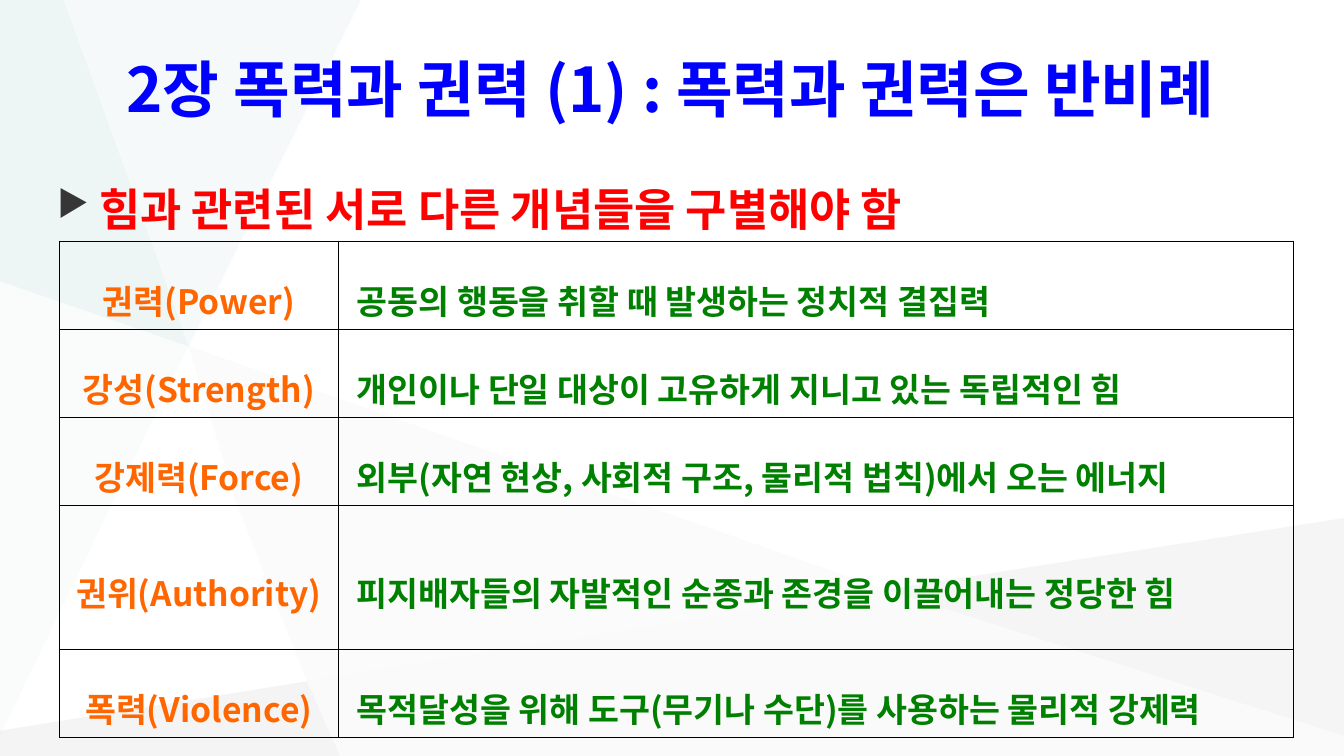
from dataclasses import dataclass
from typing import Any

from lxml.etree import SubElement
from pptx import Presentation
from pptx.dml.color import RGBColor
from pptx.enum.text import MSO_ANCHOR, MSO_AUTO_SIZE, PP_ALIGN
from pptx.oxml.ns import qn
from pptx.util import Emu, Inches, Pt

CENTER, JUSTIFY = PP_ALIGN.CENTER, PP_ALIGN.JUSTIFY
MIDDLE, TOP = MSO_ANCHOR.MIDDLE, MSO_ANCHOR.TOP
NO_FIT = MSO_AUTO_SIZE.NONE

BLUE = RGBColor(0x00, 0x00, 0xFF)
RED = RGBColor(0xFF, 0x00, 0x00)
ORANGE = RGBColor(0xFF, 0x66, 0x00)
GREEN = RGBColor(0x00, 0x80, 0x00)
BLACK = RGBColor(0x00, 0x00, 0x00)
DARK = RGBColor(0x36, 0x36, 0x36)
PEARL = RGBColor(0xF3, 0xF2, 0xF2)
STEEL = RGBColor(0xB6, 0xB8, 0xBA)
SILVER = RGBColor(0xC6, 0xC8, 0xCA)
MIST = RGBColor(0xE0, 0xED, 0xED)
TEAL = RGBColor(0xC1, 0xDB, 0xDB)

FONT = "Noto Sans CJK KR"
WIDTH, HEIGHT = Inches(13.33), Inches(7.5)
Point = tuple[float, float]

HUB: Point = (14.03, 45.8)
FOLD: Point = (22.83, 90.13)
TIP: Point = (65.94, 78)
FOOT: Point = (25.28, 100)
LEFT: Point = (0, 37.2)
EDGE: Point = (100, 97.3)
PEAK: Point = (4.73, 0)


@dataclass
class Facet:
    """A pale polygon, with corners in percent of the slide."""

    color: RGBColor
    alpha: int
    points: list[Point]


@dataclass
class Term:
    """A table row: concept, meaning and height in percent."""

    name: str
    sense: str
    height: float = 10.93


FACETS = [
    Facet(PEARL, 26, [HUB, (17.6, 66.5), FOLD, TIP]),
    Facet(STEEL, 15, [FOLD, (0, 96.67), (0, 100), FOOT]),
    Facet(MIST, 31, [(26.86, 0), PEAK, HUB]),
    Facet(SILVER, 17, [(100, 68.53), TIP, EDGE]),
    Facet(STEEL, 6, [TIP, FOLD, FOOT, (100, 100), EDGE]),
    Facet(TEAL, 27, [PEAK, (0, 0), LEFT, HUB]),
    Facet(TEAL, 8, [LEFT, (0, 97.3), HUB]),
]
TERMS = [
    Term("권력(Power)", "공동의 행동을 취할 때 발생하는 정치적 결집력"),
    Term("강성(Strength)", "개인이나 단일 대상이 고유하게 지니고 있는 독립적인 힘"),
    Term("강제력(Force)", "외부(자연 현상, 사회적 구조, 물리적 법칙)에서 오는 에너지"),
    Term("권위(Authority)", "피지배자들의 자발적인 순종과 존경을 이끌어내는 정당한 힘", 19.07),
    Term("폭력(Violence)", "목적달성을 위해 도구(무기나 수단)를 사용하는 물리적 강제력"),
]


def across(share: float) -> Emu:
    """Turn percent of the slide width into a length."""
    return Emu(round(WIDTH * share / 100))


def down(share: float) -> Emu:
    """Turn percent of the slide height into a length."""
    return Emu(round(HEIGHT * share / 100))


def apply(target: Any, values: dict[str, Any]) -> None:
    """Set each value as an attribute of the target."""
    for key, value in values.items():
        setattr(target, key, value)


def place(shape: Any, left: float, top: float, width: float, height: float) -> None:
    """Move and size a shape by shares of the slide."""
    apply(shape, {"left": across(left), "top": down(top),
                  "width": across(width), "height": down(height)})


def write(frame: Any, text: str, size: int, color: RGBColor, align: PP_ALIGN) -> None:
    """Fill a text frame with one bold line."""
    line = frame.paragraphs[0]
    apply(line, {"alignment": align, "line_spacing": 1.6})
    run = line.add_run()
    run.text = text
    apply(run.font, {"name": FONT, "size": Pt(size), "bold": True})
    run.font.color.rgb = color
    SubElement(run.font._element, qn("a:ea"), typeface=FONT)


def draw_facet(shapes: Any, facet: Facet) -> None:
    """Draw one see-through polygon."""
    start, *rest = [(across(x), down(y)) for x, y in facet.points]
    pen = shapes.build_freeform(*start)
    pen.add_line_segments(rest)
    shape = pen.convert_to_shape()
    shape.shadow.inherit = False
    shape.fill.solid()
    shape.fill.fore_color.rgb = facet.color
    shape.line.fill.background()
    color = shape.element.spPr.find(f".//{qn('a:srgbClr')}")
    SubElement(color, qn("a:alpha"), val=str(facet.alpha * 1000))


def draw_title(shapes: Any) -> None:
    """Place the title above the facets."""
    title = shapes.title
    shapes.element.append(title.element)
    place(title, 3.53, 1.87, 92.72, 13.73)
    apply(title.text_frame, {"vertical_anchor": MIDDLE, "auto_size": NO_FIT, "word_wrap": True})
    write(title.text_frame, "2장 폭력과 권력 (1) : 폭력과 권력은 반비례", 44, BLUE, CENTER)


def draw_lead(shapes: Any) -> None:
    """Draw the bulleted lead line."""
    box = shapes.add_textbox(0, 0, 0, 0)
    place(box, 3.53, 19.07, 92.72, 12)
    frame = box.text_frame
    apply(frame, {"vertical_anchor": TOP, "auto_size": NO_FIT, "word_wrap": True})
    form = frame.paragraphs[0]._p.get_or_add_pPr()
    indent = across(3.1)
    form.set("marL", str(indent))
    form.set("indent", str(-indent))
    tint = SubElement(form, qn("a:buClr"))
    SubElement(tint, qn("a:srgbClr"), val=str(DARK))
    SubElement(form, qn("a:buSzPct"), val="80000")
    SubElement(form, qn("a:buChar"), char="▶")
    write(frame, "힘과 관련된 서로 다른 개념들을 구별해야 함", 32, RED, JUSTIFY)


def frame_cell(cell: Any) -> None:
    """Give a cell thin borders and no fill."""
    form = cell._tc.get_or_add_tcPr()
    for side in ("lnL", "lnR", "lnT", "lnB"):
        line = SubElement(form, qn(f"a:{side}"), w=str(Pt(0.33)))
        fill = SubElement(line, qn("a:solidFill"))
        SubElement(fill, qn("a:srgbClr"), val=str(BLACK))
    cell.fill.background()


def draw_table(shapes: Any) -> None:
    """Draw the table of concepts."""
    height = sum(term.height for term in TERMS)
    table = shapes.add_table(len(TERMS), 2, across(4.43), down(31.87),
                             across(91.82), down(height)).table
    apply(table, {"first_row": False, "horz_banding": False})
    for column, share in zip(table.columns, (20.71, 71.11)):
        column.width = across(share)
    for row, term in zip(table.rows, TERMS):
        row.height = down(term.height)
        name, sense = row.cells
        sides = ((name, term.name, ORANGE, CENTER, 0.75),
                 (sense, term.sense, GREEN, JUSTIFY, 1.4))
        for cell, text, color, align, margin in sides:
            apply(cell, {"vertical_anchor": MIDDLE, "margin_left": across(margin)})
            write(cell.text_frame, text, 24, color, align)
            frame_cell(cell)


def main() -> None:
    """Build and save the slide."""
    deck = Presentation()
    apply(deck, {"slide_width": WIDTH, "slide_height": HEIGHT})
    shapes = deck.slides.add_slide(deck.slide_layouts[5]).shapes
    for facet in FACETS:
        draw_facet(shapes, facet)
    draw_title(shapes)
    draw_lead(shapes)
    draw_table(shapes)
    deck.save("out.pptx")


if __name__ == "__main__":
    main()
